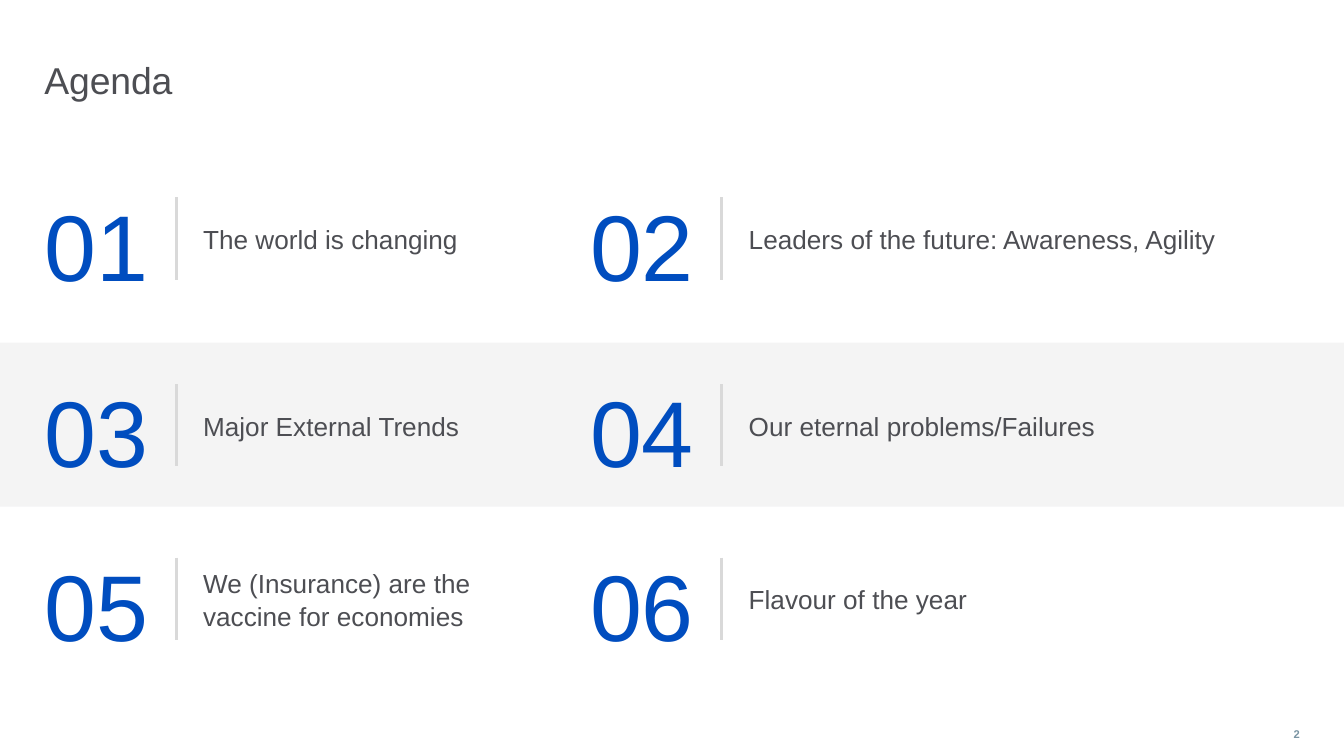
import pptx
import pptx.util
import pptx.dml.color
import pptx.enum.shapes
import pptx.enum.text
import pptx.oxml.ns
import lxml.etree

Pt = pptx.util.Pt
RGB = pptx.dml.color.RGBColor
ALIGN = pptx.enum.text.PP_ALIGN
ANCHOR = pptx.enum.text.MSO_ANCHOR
qn = pptx.oxml.ns.qn

BLUE = RGB(0x00, 0x4D, 0xBF)
DARK = RGB(0x4D, 0x4E, 0x53)
STEEL = RGB(0x7A, 0x94, 0xA3)
RULE = RGB(0xD9, 0xD9, 0xD9)
BAND = RGB(0xDB, 0xDB, 0xDD)

WIDE, HIGH = 720, 405
LEFT = 23.8
COLS = [LEFT, 316.1]
ROWS = [95.8, 195.8, 288.7]
TOPICS = [
    ("The world is changing", 238.3),
    ("Leaders of the future: Awareness, Agility", 294.5),
    ("Major External Trends", 238.3),
    ("Our eternal problems/Failures", 314.6),
    ("We (Insurance) are the vaccine for economies", 185.8),
    ("Flavour of the year", 238.3),
]


def add_text(slide, box, text, size, color, pads=(0, 0), mid=False,
             space=None, bold=False, align=ALIGN.LEFT):
    shape = slide.shapes.add_textbox(*[Pt(n) for n in box])
    frame = shape.text_frame
    frame.word_wrap = True
    frame.margin_left = frame.margin_right = 0
    frame.margin_top, frame.margin_bottom = [Pt(n) for n in pads]
    frame.vertical_anchor = ANCHOR.MIDDLE if mid else ANCHOR.TOP
    para = frame.paragraphs[0]
    para.alignment = align
    if space:
        para.line_spacing = space
    run = para.add_run()
    run.text = text
    run.font.name = "Arial"
    run.font.size = Pt(size)
    run.font.bold = bold
    run.font.color.rgb = color
    return run


def add_band(slide, x, y, w, h):
    band = slide.shapes.add_shape(
        pptx.enum.shapes.MSO_SHAPE.RECTANGLE, Pt(x), Pt(y), Pt(w), Pt(h))
    band.shadow.inherit = False
    band.fill.solid()
    band.fill.fore_color.rgb = BAND
    band.line.fill.background()
    tint = band.fill._xPr.find(qn("a:solidFill"))[0]
    lxml.etree.SubElement(tint, qn("a:alpha")).set("val", "30000")


def add_title(slide, x, y, w, h):
    run = add_text(slide, (x, y, w, h), "Agenda", 20, DARK, space=1.1)
    run.font._element.set("spc", "-10")


def add_topic(slide, x, y, w, num, text):
    add_text(slide, (x, y, 56.2, 63.4), f"{num:02}", 50, BLUE,
             pads=(0, 3.6), space=1.08)
    add_text(slide, (x + 85, y + 19.4, w, 25.2), text, 14, DARK,
             pads=(3.6, 3.6), mid=True, space=1.05)
    rule = slide.shapes.add_connector(
        pptx.enum.shapes.MSO_CONNECTOR.STRAIGHT,
        Pt(x + 70.6), Pt(y + 10), Pt(x + 70.6), Pt(y + 54))
    rule.line.color.rgb = RULE
    rule.line.width = Pt(1.5)
    lxml.etree.SubElement(rule._element.spPr, qn("a:effectLst"))


def add_foot(slide, x, y, w, h):
    add_text(slide, (x, y, w, h), "2", 6, STEEL, mid=True, bold=True,
             align=ALIGN.RIGHT)


def main():
    deck = pptx.Presentation()
    deck.slide_width, deck.slide_height = Pt(WIDE), Pt(HIGH)
    slide = deck.slides.add_slide(deck.slide_layouts[6])
    add_band(slide, 0, 183.6, WIDE, 87.9)
    add_title(slide, LEFT, 28.1, 538.6, 43.9)
    for spot, (text, wide) in enumerate(TOPICS):
        row, col = divmod(spot, len(COLS))
        add_topic(slide, COLS[col], ROWS[row], wide, spot + 1, text)
    add_foot(slide, 665.3, 385.2, 31, 15.8)
    deck.save("out.pptx")


if __name__ == "__main__":
    main()
